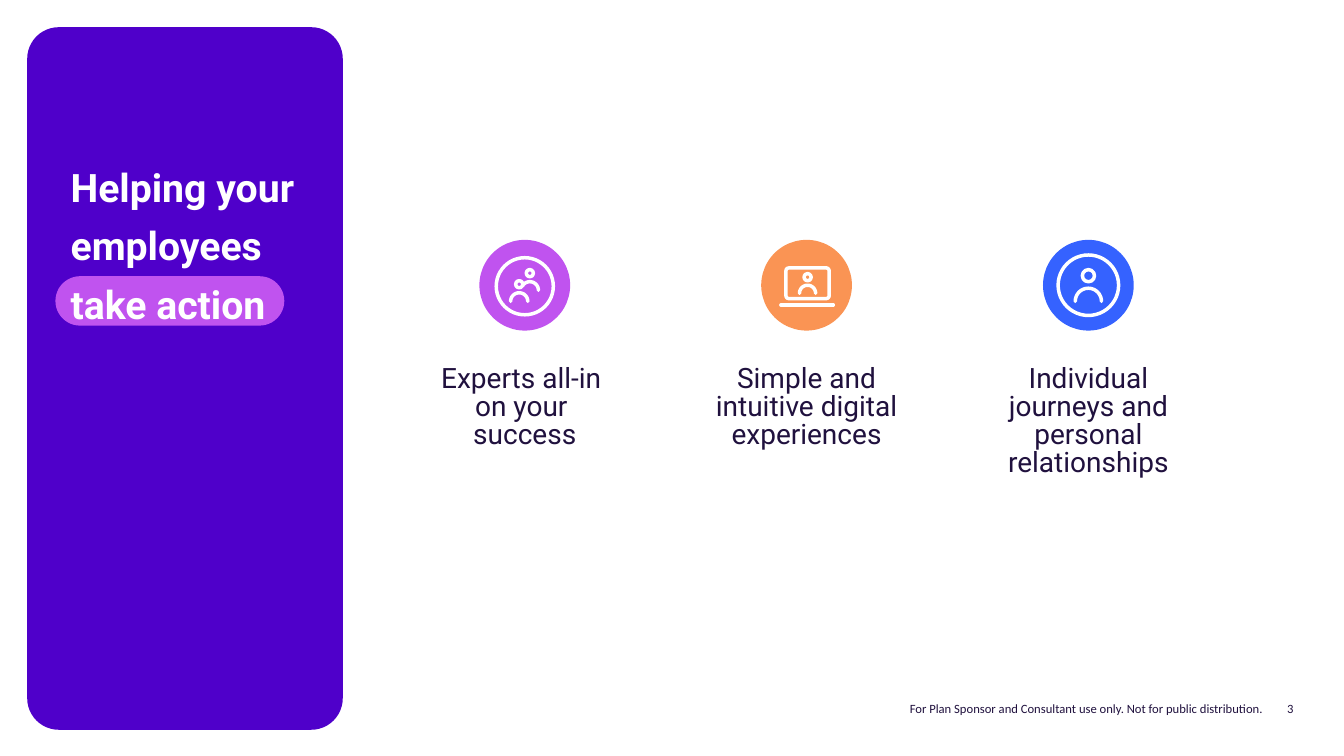
import math

from lxml import etree
from pptx import Presentation
from pptx import util as u
from pptx.dml.color import RGBColor
from pptx.enum import shapes, text
from pptx.oxml import ns

# Grid: square cells, a tenth of an inch each
COLUMNS, ROWS = 133.3, 75
CENTRE_COLUMN, COLUMN_STEP, DISC_ROW = 52.05, 27.95, 28.3
DISC = 9
STROKE = u.Pt(2.5)

WHITE, INK = "FFFFFF", "20113E"
PURPLE, ORCHID, ORANGE, BLUE = "4F00CA", "C053EF", "FA9454", "3562FF"


def cells(*counts):
    return [u.Inches(count / 10) for count in counts]


def colour(hex_string):
    return RGBColor.from_string(hex_string)


def solid(slide, preset, left, top, width, height, fill, corner=None):
    block = slide.shapes.add_shape(preset, *cells(left, top, width, height))
    block.shadow.inherit = False
    block.fill.solid()
    block.fill.fore_color.rgb = colour(fill)
    block.line.fill.background()
    if corner is not None:
        block.adjustments[0] = corner


def stroke(part):
    """Give an icon part its white, round-ended line."""
    part.line.color.rgb = colour(WHITE)
    part.line.width = STROKE
    part.element.spPr.find(ns.qn("a:ln")).set("cap", "rnd")


def outline(slide, preset, x, y, width, height, corner=None):
    """Outlined shape centred on x, y."""
    ring = slide.shapes.add_shape(
        preset, *cells(x - width / 2, y - height / 2, width, height))
    ring.shadow.inherit = False
    ring.fill.background()
    stroke(ring)
    if corner is not None:
        ring.adjustments[0] = corner


def circle(slide, x, y, radius):
    outline(slide, shapes.MSO_SHAPE.OVAL, x, y, 2 * radius, 2 * radius)


def person(slide, x, head_y, head, shoulder_y, shoulder, start=180):
    """Head ring above an arc that runs from the start angle to the right."""
    circle(slide, x, head_y, head)
    steps = 24
    angles = [math.radians(start * (1 - i / steps)) for i in range(steps + 1)]
    points = [cells(x + shoulder * math.cos(a), shoulder_y - shoulder * math.sin(a))
              for a in angles]
    builder = slide.shapes.build_freeform(*points[0])
    builder.add_line_segments(points[1:], close=False)
    arc = builder.convert_to_shape()
    arc.shadow.inherit = False
    arc.fill.background()
    stroke(arc)


# Icons, each drawn around the centre of its disc
def experts_icon(slide, x, y):
    circle(slide, x, y + 0.1, 2.83)
    person(slide, x - 0.55, y - 0.1, 0.35, y + 1.6, 0.85)
    person(slide, x + 0.5, y - 1.2, 0.35, y + 0.5, 0.85, start=150)


def digital_icon(slide, x, y):
    outline(slide, shapes.MSO_SHAPE.ROUNDED_RECTANGLE, x + 0.1, y - 0.2, 4.3, 3.05, 0.1)
    person(slide, x + 0.1, y - 0.8, 0.35, y + 0.8, 0.8)
    base = slide.shapes.add_connector(
        shapes.MSO_CONNECTOR.STRAIGHT,
        *cells(x - 2.55, y + 1.95, x + 2.65, y + 1.95))
    stroke(base)
    etree.SubElement(base.element.spPr, ns.qn("a:effectLst"))


def individual_icon(slide, x, y):
    circle(slide, x, y, 3)
    person(slide, x, y - 0.95, 0.6, y + 1.6, 1.3)


# Text
def set_frame(frame, anchor):
    frame.word_wrap = True
    frame.auto_size = text.MSO_AUTO_SIZE.NONE
    frame.vertical_anchor = anchor
    frame.margin_left = frame.margin_right = 0
    frame.margin_top = frame.margin_bottom = 0


def add_run(paragraph, words, size, font, fill, bold=False):
    run = paragraph.add_run()
    run.text = words
    run.font.size = u.Pt(size)
    run.font.name = font
    run.font.bold = bold
    run.font.color.rgb = colour(fill)


def label(slide, box, lines, size, font, align, spacing, anchor):
    frame = slide.shapes.add_textbox(*cells(*box)).text_frame
    set_frame(frame, anchor)
    for number, words in enumerate(lines):
        paragraph = frame.add_paragraph() if number else frame.paragraphs[0]
        paragraph.alignment = align
        paragraph.line_spacing = spacing
        add_run(paragraph, words, size, font, INK)


def headline(slide):
    title = slide.shapes.title
    title.left, title.top, title.width, title.height = cells(7, 15, 25.3, 12.5)
    set_frame(title.text_frame, text.MSO_ANCHOR.TOP)
    paragraph = title.text_frame.paragraphs[0]
    paragraph.alignment = text.PP_ALIGN.LEFT
    paragraph.line_spacing = u.Pt(42)
    paragraph.space_before = u.Pt(0)
    add_run(paragraph, "Helping your employees", 28, "Roboto", WHITE, True)
    paragraph.add_line_break()
    add_run(paragraph, "take action", 28, "Roboto", WHITE, True)
    title.element.getparent().append(title.element)  # in front of the panel


def footer(slide, left, width, bottom, words):
    label(slide, (left, bottom - 2, width, 2), [words], 9, "Calibri",
          text.PP_ALIGN.RIGHT, 0.95, text.MSO_ANCHOR.BOTTOM)


def main():
    deck = Presentation()
    deck.slide_width, deck.slide_height = cells(COLUMNS, ROWS)
    slide = deck.slides.add_slide(deck.slide_layouts[5])

    # Footer
    footer(slide, 125.2, 3.1, 71.1, "3")
    footer(slide, 79.4, 45.8, 71.1,
           "For Plan Sponsor and Consultant use only. Not for public distribution.")

    # Side panel with the headline
    rounded = shapes.MSO_SHAPE.ROUNDED_RECTANGLE
    solid(slide, rounded, 2.7, 2.7, 31.3, ROWS - 5.3, PURPLE, 0.1)
    solid(slide, rounded, 5.5, 27.4, 22.7, 4.9, ORCHID, 0.5)
    headline(slide)

    # Three promises: disc, icon and label
    promises = [
        (ORCHID, experts_icon, 24.4, ["Experts all-in ", "on your ", "success"]),
        (ORANGE, digital_icon, 20.1, ["Simple and intuitive digital experiences"]),
        (BLUE, individual_icon, 22.1,
         ["Individual journeys and personal relationships"]),
    ]
    for number, (fill, icon, width, lines) in enumerate(promises):
        x = CENTRE_COLUMN + number * COLUMN_STEP
        solid(slide, shapes.MSO_SHAPE.OVAL, x - DISC / 2, DISC_ROW - DISC / 2,
              DISC, DISC, fill)
        icon(slide, x, DISC_ROW)
        label(slide, (x - width / 2, 36.3, width, 11), lines, 20, "Roboto",
              text.PP_ALIGN.CENTER, u.Pt(20), text.MSO_ANCHOR.TOP)

    deck.save("out.pptx")


if __name__ == "__main__":
    main()
